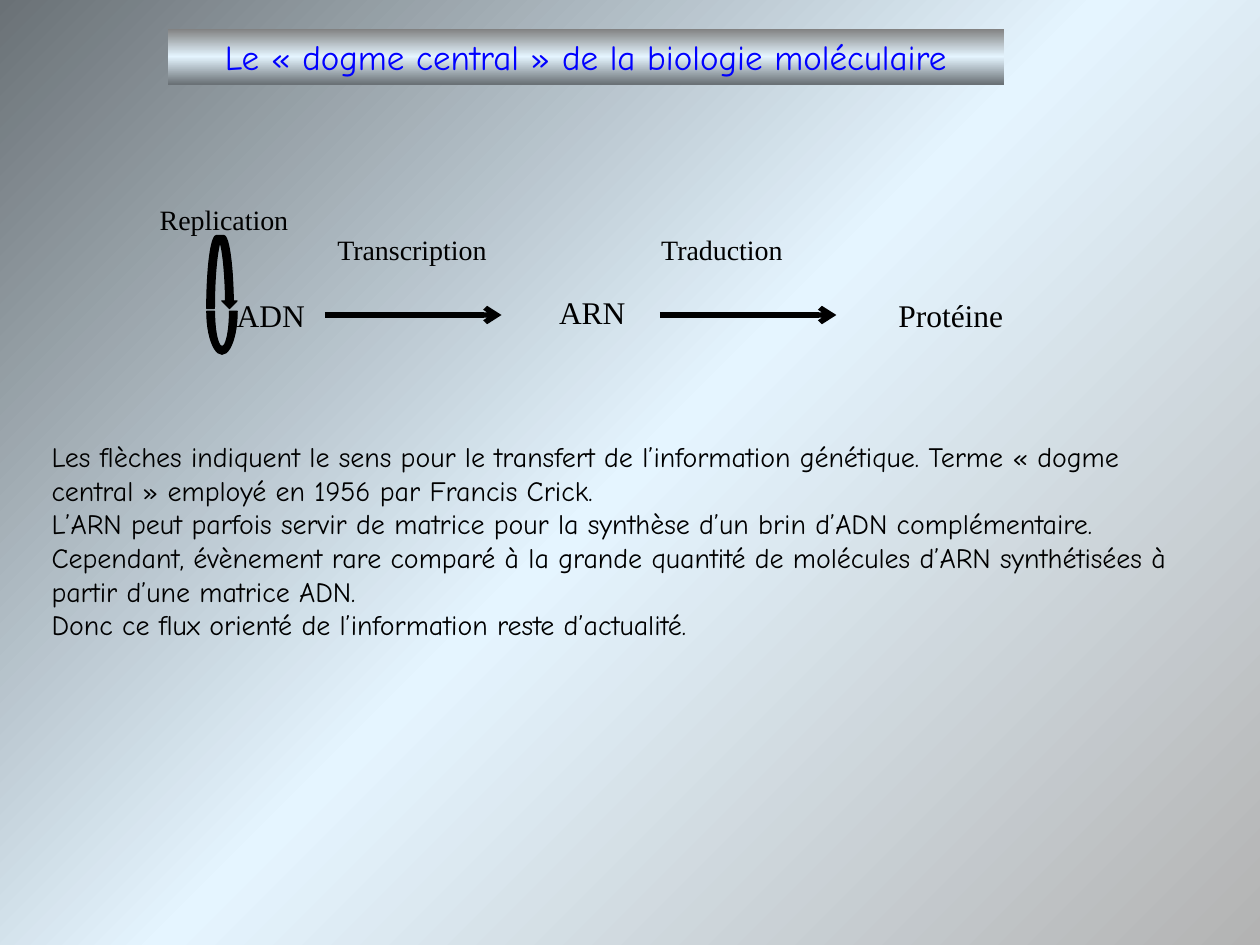
import pptx
import pptx.dml.color
import pptx.enum.shapes
import pptx.enum.text
import pptx.oxml
import pptx.oxml.ns
import pptx.util
from pptx.util import Cm

BLACK = pptx.dml.color.RGBColor(0x00, 0x00, 0x00)
BLUE = pptx.dml.color.RGBColor(0x00, 0x00, 0xFF)
SILVER = pptx.dml.color.RGBColor(0xB3, 0xB3, 0xB3)
GREY = pptx.dml.color.RGBColor(0x80, 0x80, 0x80)
ICE = pptx.dml.color.RGBColor(0xE5, 0xF5, 0xFF)
SLATE = pptx.dml.color.RGBColor(0x6A, 0x71, 0x76)

MSO_SHAPE = pptx.enum.shapes.MSO_SHAPE
LINEAR = '<a:lin ang="5400000" scaled="1"/>'
CORNER = '<a:path path="circle"><a:fillToRect l="100000" t="100000"/></a:path>'

TITLE = {"name": "Comic Neue", "size": pptx.util.Pt(20), "color": BLUE}
BODY = {"name": "Comic Neue", "size": pptx.util.Pt(16), "color": BLACK}
MOLECULE = {"name": "Times New Roman", "size": pptx.util.Pt(18), "color": BLACK}
PROCESS = {"name": "Times New Roman", "size": pptx.util.Pt(16), "color": BLACK}

PARAGRAPHS = [
    "Les flèches indiquent le sens pour le transfert de l’information génétique. "
    "Terme « dogme central » employé en 1956 par Francis Crick.",
    "L’ARN peut parfois servir de matrice pour la synthèse d’un brin d’ADN "
    "complémentaire. Cependant, évènement rare comparé à la grande quantité de "
    "molécules d’ARN synthétisées à partir d’une matrice ADN.",
    "Donc ce flux orienté de l’information reste d’actualité.",
]


def set_gradient(fill, parent, colors, direction):
    """Fill the parent element with an even gradient of the given colours."""
    fill.solid()
    last = len(colors) - 1
    stops = "".join(
        f'<a:gs pos="{100000 * i // last}"><a:srgbClr val="{color}"/></a:gs>'
        for i, color in enumerate(colors)
    )
    solid = parent.find(pptx.oxml.ns.qn("a:solidFill"))
    parent.replace(solid, pptx.oxml.parse_xml(
        f'<a:gradFill {pptx.oxml.ns.nsdecls("a")} rotWithShape="1">'
        f"<a:gsLst>{stops}</a:gsLst>{direction}</a:gradFill>"
    ))


def write(tf, texts, style, wrap=True):
    """Write the texts as paragraphs in one style."""
    tf.word_wrap = wrap
    tf.auto_size = pptx.enum.text.MSO_AUTO_SIZE.SHAPE_TO_FIT_TEXT
    for i, text in enumerate(texts):
        p = tf.add_paragraph() if i else tf.paragraphs[0]
        r = p.add_run()
        r.text = text
        for key, value in style.items():
            if key == "color":
                r.font.color.rgb = value
            else:
                setattr(r.font, key, value)


def add_background(s):
    """Shade the slide from its bottom right corner."""
    bg_pr = s.background.fill and s.background._cSld.bg.bgPr
    set_gradient(s.background.fill, bg_pr, [SILVER, ICE, SLATE], CORNER)


def add_title(s, left, top, width, height):
    """Place the title on its shaded bar."""
    sp = s.shapes.add_shape(
        MSO_SHAPE.RECTANGLE, Cm(left), Cm(top), Cm(width), Cm(height))
    sp.shadow.inherit = False
    sp.line.fill.background()
    set_gradient(sp.fill, sp._element.spPr, [GREY, ICE, SLATE], LINEAR)
    write(sp.text_frame, ["Le « dogme central » de la biologie moléculaire"], TITLE)
    sp.text_frame.paragraphs[0].alignment = pptx.enum.text.PP_ALIGN.CENTER


def add_label(s, text, left, top, width, height, style):
    """Place a one-line label and return it."""
    sp = s.shapes.add_textbox(Cm(left), Cm(top), Cm(width), Cm(height))
    write(sp.text_frame, [text], style, wrap=False)
    return sp


def add_arrow(s, left, right, y):
    """Draw a thick horizontal arrow and return it."""
    line = s.shapes.add_connector(
        pptx.enum.shapes.MSO_CONNECTOR.STRAIGHT, Cm(left), Cm(y), Cm(right), Cm(y))
    line.line.color.rgb = BLACK
    line.line.width = pptx.util.Pt(3)
    ln = line.line._get_or_add_ln()
    ln.append(ln.makeelement(pptx.oxml.ns.qn("a:tailEnd"), {"type": "arrow"}))
    sp_pr = line._element.spPr
    sp_pr.append(sp_pr.makeelement(pptx.oxml.ns.qn("a:effectLst"), {}))
    return line


def add_loop(s, left, top, width):
    """Draw the replication loop from a curved arrow and a half ring."""
    group = s.shapes.add_group_shape()
    for kind, dy, height, rotation in (
        (MSO_SHAPE.CURVED_DOWN_ARROW, 0, 1.47, 0),
        (MSO_SHAPE.BLOCK_ARC, 0.66, 1.73, 180),
    ):
        sp = group.shapes.add_shape(
            kind, Cm(left), Cm(top + dy), Cm(width), Cm(height))
        sp.rotation = rotation
        sp.shadow.inherit = False
        sp.fill.solid()
        sp.fill.fore_color.rgb = BLACK
        sp.line.color.rgb = BLACK
        sp.line.width = pptx.util.Pt(0.75)


def add_diagram(s, left, top):
    """Draw the flow from DNA through RNA to protein."""
    axis = top + 2.39
    add_loop(s, left + 1.2, top + 0.79, 0.61)
    adn, *_ = [
        add_label(s, text, left + dx, axis - 0.51 - rise, width, 1.02, MOLECULE)
        for text, dx, width, rise in (
            ("ADN", 1.55, 2.03, 0),
            ("ARN", 8.05, 1.85, 0.05),
            ("Protéine", 14.89, 2.9, 0),
        )
    ]
    for text, dx, dy, width in (
        ("Replication", 0, 0, 3.33),
        ("Transcription", 3.58, 0.61, 3.78),
        ("Traduction", 10.11, 0.61, 3.18),
    ):
        add_label(s, text, left + dx, top + dy, width, 0.94, PROCESS)
    transcription, _ = [
        add_arrow(s, left + dx, left + dx + 3.56, axis) for dx in (3.58, 10.33)
    ]
    transcription.begin_connect(adn, 3)


def add_body(s, left, top, width, height):
    """Place the explanation under the diagram."""
    sp = s.shapes.add_textbox(Cm(left), Cm(top), Cm(width), Cm(height))
    write(sp.text_frame, PARAGRAPHS, BODY)


def main():
    """Build and save the slide."""
    prs = pptx.Presentation()
    prs.slide_width, prs.slide_height = Cm(25.4), Cm(19.05)
    s = prs.slides.add_slide(prs.slide_layouts[6])
    add_background(s)
    add_title(s, 3.38, 0.58, 16.87, 1.12)
    add_diagram(s, 2.97, 3.96)
    add_body(s, 0.79, 8.74, 23.62, 4.37)
    prs.save("out.pptx")


if __name__ == "__main__":
    main()
